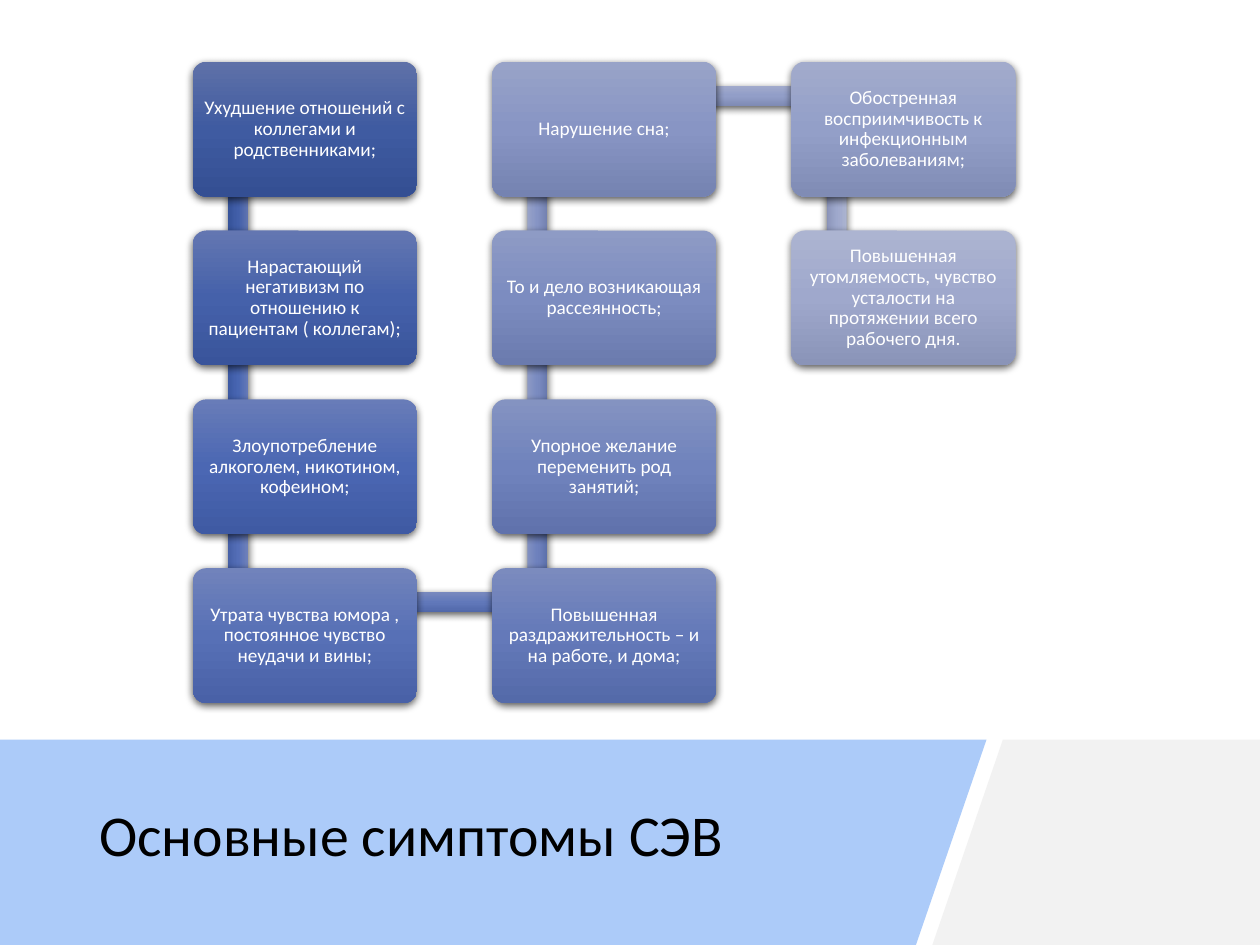
from math import hypot

from pptx import Presentation
from pptx.dml.color import RGBColor
from pptx.enum.shapes import MSO_SHAPE as Kind
from pptx.enum.text import MSO_ANCHOR as Anchor, PP_ALIGN as Align
from pptx.oxml import parse_xml
from pptx.util import Inches, Pt

NS = 'xmlns:a="http://schemas.openxmlformats.org/drawingml/2006/main"'
ROWS = 4
STEPS = [
    ("Ухудшение отношений с коллегами и родственниками;",
     "5F71A8 3F5BA1 344F93", "6175B0 425FA9 36539A"),
    ("Нарастающий негативизм по отношению к пациентам ( коллегам);",
     "6376B1 4561AA 39549B", "667AB8 4866B2 3C59A3"),
    ("Злоупотребление алкоголем, никотином, кофеином;",
     "687CB8 4B67B3 3F5AA3", "6F81BB 546EB7 4660A7"),
    ("Утрата чувства юмора , постоянное чувство неудачи и вины;",
     "7183BB 5770B6 4961A7", "7889BE 6178BA 5168AA"),
    ("Повышенная раздражительность – и на работе, и дома;",
     "7B8BBE 6479B9 546AA9", "8291C1 6E81BD 5D71AC"),
    ("Упорное желание переменить род занятий;",
     "8493C1 7083BD 6072AC", "8D9AC5 7A8BC0 6979AF"),
    ("То и дело возникающая рассеянность;",
     "8E9BC5 7C8CC0 6B7BAE", "97A2C8 8694C4 7482B1"),
    ("Нарушение сна;",
     "98A3C8 8895C4 7583B1", "A1AACC 929EC8 7F8BB5"),
    ("Обостренная восприимчивость к инфекционным заболеваниям;",
     "A2ABCC 939FC8 808CB5", "ABB3D0 9EA8CC 8A93B8"),
    ("Повышенная утомляемость, чувство усталости на протяжении всего рабочего дня.",
     "ACB4D1 9FA8CC 8A94B8", None),
]


def color(text):
    """Turn a hex string into a colour."""
    return RGBColor.from_string(text)


def style(shape, tones):
    """Give a shape a downward gradient of three tones and a soft shadow."""
    shape.line.fill.background()
    stops = "".join(f'<a:gs pos="{i * 50000}"><a:srgbClr val="{tone}"/></a:gs>'
                    for i, tone in enumerate(tones.split()))
    grad = parse_xml(f'<a:gradFill {NS} rotWithShape="1"><a:gsLst>{stops}</a:gsLst>'
                     '<a:lin ang="5400000" scaled="0"/></a:gradFill>')
    glow = parse_xml(f'<a:effectLst {NS}><a:outerShdw blurRad="{Pt(4.5)}" dist="{Pt(1.5)}" '
                     'dir="5400000" algn="ctr" rotWithShape="0"><a:srgbClr val="000000">'
                     '<a:alpha val="63000"/></a:srgbClr></a:outerShdw></a:effectLst>')
    line = shape.line._get_or_add_ln()
    line.addprevious(grad)
    line.addnext(glow)


def write(frame, text, size, tone, align):
    """Put one formatted paragraph in a text frame."""
    frame.text = text
    frame.word_wrap = True
    frame.vertical_anchor = Anchor.MIDDLE
    para = frame.paragraphs[0]
    para.alignment = align
    para.line_spacing = 0.9
    font = para.runs[0].font
    font.name, font.size = "Calibri", Pt(size)
    font.color.rgb = color(tone)


def add_link(slide, start, end, tones):
    """Draw a bar from one point to the next, turned along its way."""
    (x, y), (x2, y2) = start, end
    size, thick = hypot(x2 - x, y2 - y), Inches(0.16)
    bar = slide.shapes.add_shape(Kind.RECTANGLE, int((x + x2 - size) / 2),
                                 int((y + y2 - thick) / 2), int(size), thick)
    bar.rotation = 0 if y == y2 else 90 if y2 > y else 270
    style(bar, tones)


def add_card(slide, left, top, wide, high, text, tones):
    """Draw one symptom card."""
    card = slide.shapes.add_shape(Kind.ROUNDED_RECTANGLE, left, top, wide, high)
    card.adjustments[0] = 0.1
    style(card, tones)
    frame = card.text_frame
    frame.margin_left = frame.margin_right = Inches(0.05)
    frame.margin_top = frame.margin_bottom = Inches(0.05)
    write(frame, text, 11, "FFFFFF", Align.CENTER)


def add_snake(slide, left, top, wide, high):
    """Lay the cards down and up the columns of a box, joined by bars."""
    card_w, card_h = Inches(1.78), Inches(1.07)
    step_x, step_y = (wide - card_w) // 2, (high - card_h) // (ROWS - 1)
    spots = []
    for i in range(len(STEPS)):
        col, row = divmod(i, ROWS)
        row = ROWS - 1 - row if col % 2 else row
        spots.append((left + col * step_x, top + row * step_y))
    joints = [(x + Inches(0.36), y + Inches(0.27)) for x, y in spots]
    for i, (text, tones, bar) in enumerate(STEPS):
        if bar:
            add_link(slide, joints[i], joints[i + 1], bar)
        add_card(slide, *spots[i], card_w, card_h, text, tones)


def add_panel(slide, points, tone):
    """Draw a flat panel through the given points."""
    build = slide.shapes.build_freeform(*points[0], scale=1.0)
    build.add_line_segments(points[1:], close=True)
    panel = build.convert_to_shape()
    panel.shadow.inherit = False
    panel.fill.solid()
    panel.fill.fore_color.rgb = color(tone)
    panel.line.fill.background()


def add_footer(slide, left, top, wide, high):
    """Draw the slanted title band and the grey panel beside it."""
    right, base, slant = left + wide, top + high, Inches(0.56)
    grey, blue = left + Inches(7.4), left + Inches(7.27)
    add_panel(slide, [(grey + slant, top), (right, top), (right, base), (grey, base)], "F2F2F2")
    add_panel(slide, [(left, top), (blue + slant, top), (blue, base), (left, base)], "ACCBF9")
    title = slide.shapes.add_textbox(left + Inches(0.69), top + Inches(0.18),
                                     Inches(6.63), Inches(1.2))
    write(title.text_frame, "Основные симптомы СЭВ", 33, "000000", Align.LEFT)


def main():
    """Build and save the slide."""
    deck = Presentation()
    deck.slide_width, deck.slide_height = Inches(10), Inches(7.5)
    slide = deck.slides.add_slide(deck.slide_layouts[6])
    add_footer(slide, 0, Inches(5.87), Inches(10), Inches(1.63))
    add_snake(slide, Inches(1.53), Inches(0.49), Inches(6.53), Inches(5.09))
    deck.save("out.pptx")


if __name__ == "__main__":
    main()
